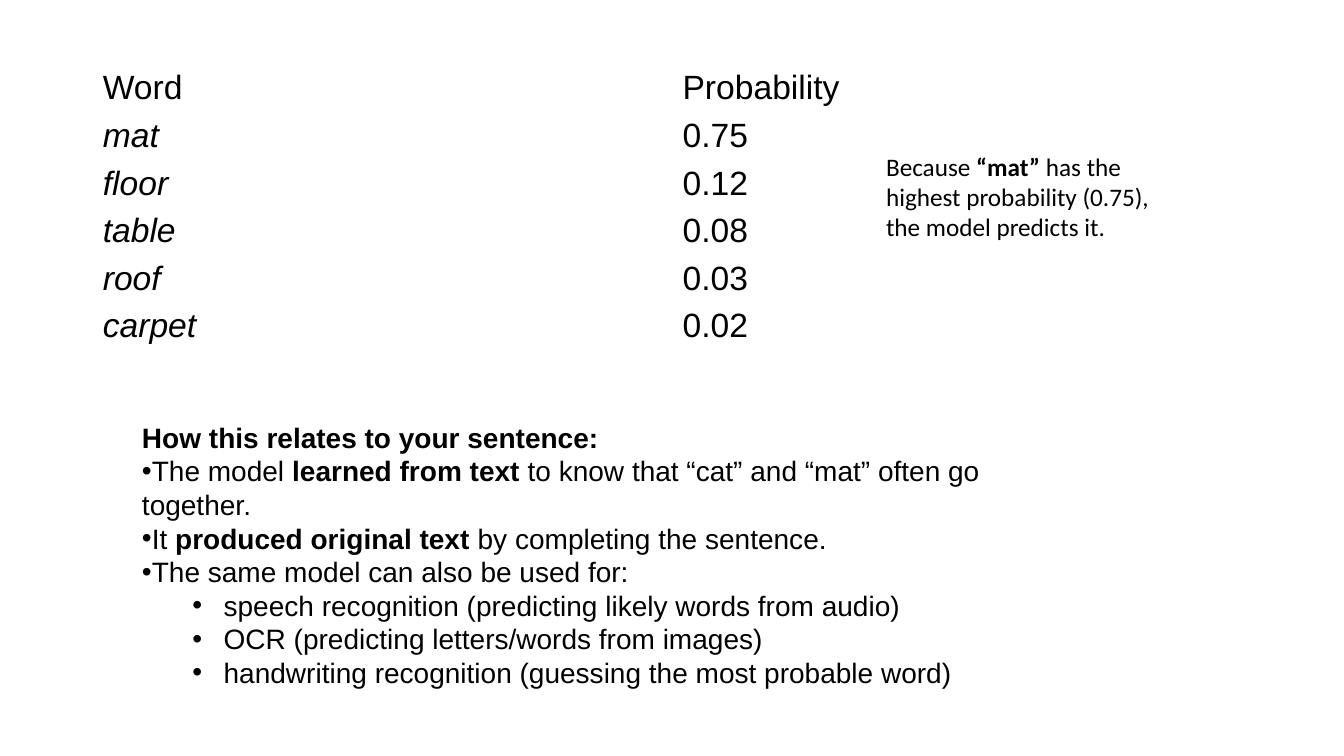
from lxml import etree
from pptx import Presentation
from pptx.dml.color import RGBColor
from pptx.enum.text import MSO_ANCHOR
from pptx.oxml.ns import qn
from pptx.util import Inches, Pt

BLACK = "000000"
PROBABILITIES = [
    ("Word", "Probability"),
    ("mat", "0.75"),
    ("floor", "0.12"),
    ("table", "0.08"),
    ("roof", "0.03"),
    ("carpet", "0.02"),
]
PREDICTION = [
    ("Because ", False),
    ("“mat”", True),
    (" has the highest probability (0.75), the model predicts it.", False),
]
HEADING = "How this relates to your sentence:"
POINTS = [
    [
        ("The model ", False),
        ("learned from text", True),
        (" to know that “cat” and “mat” often go together.", False),
    ],
    [
        ("It ", False),
        ("produced original text", True),
        (" by completing the sentence.", False),
    ],
    [("The same model can also be used for:", False)],
]
USES = [
    "speech recognition (predicting likely words from audio)",
    "OCR (predicting letters/words from images)",
    "handwriting recognition (guessing the most probable word)",
]


def color(hex_value):
    """Turn a hex string into a colour."""
    return RGBColor.from_string(hex_value)


def add_run(paragraph, text, font_name, size, bold=False, italic=False):
    """Append one formatted run to a paragraph."""
    run = paragraph.add_run()
    run.text = text
    font = run.font
    font.name, font.size = font_name, Pt(size)
    font.bold, font.italic = bold, italic
    font.color.rgb = color(BLACK)


def add_bullet(paragraph, left=0, indent=0):
    """Give a paragraph a round bullet and its indents."""
    properties = paragraph._p.get_or_add_pPr()
    properties.set("marL", str(Inches(left)))
    properties.set("indent", str(Inches(indent)))
    etree.SubElement(properties, qn("a:buFont")).set("typeface", "Arial")
    etree.SubElement(properties, qn("a:buChar")).set("char", "•")


def add_text_frame(slide, left, top, width, height):
    """Add a wrapping text box and return its text frame."""
    shape = slide.shapes.add_textbox(
        Inches(left), Inches(top), Inches(width), Inches(height)
    )
    shape.text_frame.word_wrap = True
    return shape.text_frame


def add_probability_table(slide, left, top, width, height):
    """Place the plain table of words and probabilities."""
    table = slide.shapes.add_table(
        len(PROBABILITIES), 2, Inches(left), Inches(top), Inches(width), Inches(height)
    ).table
    table.first_row = False
    table.horz_banding = False
    for row_index, values in enumerate(PROBABILITIES):
        for column_index, value in enumerate(values):
            cell = table.cell(row_index, column_index)
            cell.fill.background()
            cell.vertical_anchor = MSO_ANCHOR.MIDDLE
            cell.margin_top = cell.margin_bottom = Inches(0.04)
            italic = row_index > 0 and column_index == 0
            add_run(cell.text_frame.paragraphs[0], value, "Arial", 24, italic=italic)


def add_prediction(slide, left, top, width, height):
    """Place the remark on the predicted word."""
    paragraph = add_text_frame(slide, left, top, width, height).paragraphs[0]
    for text, bold in PREDICTION:
        add_run(paragraph, text, "Calibri", 18, bold)


def add_explanation(slide, left, top, width, height):
    """Place the heading with its two levels of bullets."""
    text_frame = add_text_frame(slide, left, top, width, height)
    add_run(text_frame.paragraphs[0], HEADING, "Arial", 20, True)
    for point in POINTS:
        paragraph = text_frame.add_paragraph()
        add_bullet(paragraph)
        for text, bold in point:
            add_run(paragraph, text, "Arial", 20, bold)
    for use in USES:
        paragraph = text_frame.add_paragraph()
        paragraph.level = 1
        add_bullet(paragraph, 0.81, -0.31)
        add_run(paragraph, use, "Arial", 20)


def main():
    """Build and save the slide."""
    presentation = Presentation()
    presentation.slide_width = Inches(13.33)
    presentation.slide_height = Inches(7.5)
    slide = presentation.slides.add_slide(presentation.slide_layouts[6])
    add_probability_table(slide, 0.92, 0.64, 11.5, 2.83)
    add_prediction(slide, 8.69, 1.45, 3.13, 1.01)
    add_explanation(slide, 1.31, 4.12, 9.52, 2.79)
    presentation.save("out.pptx")


if __name__ == "__main__":
    main()
